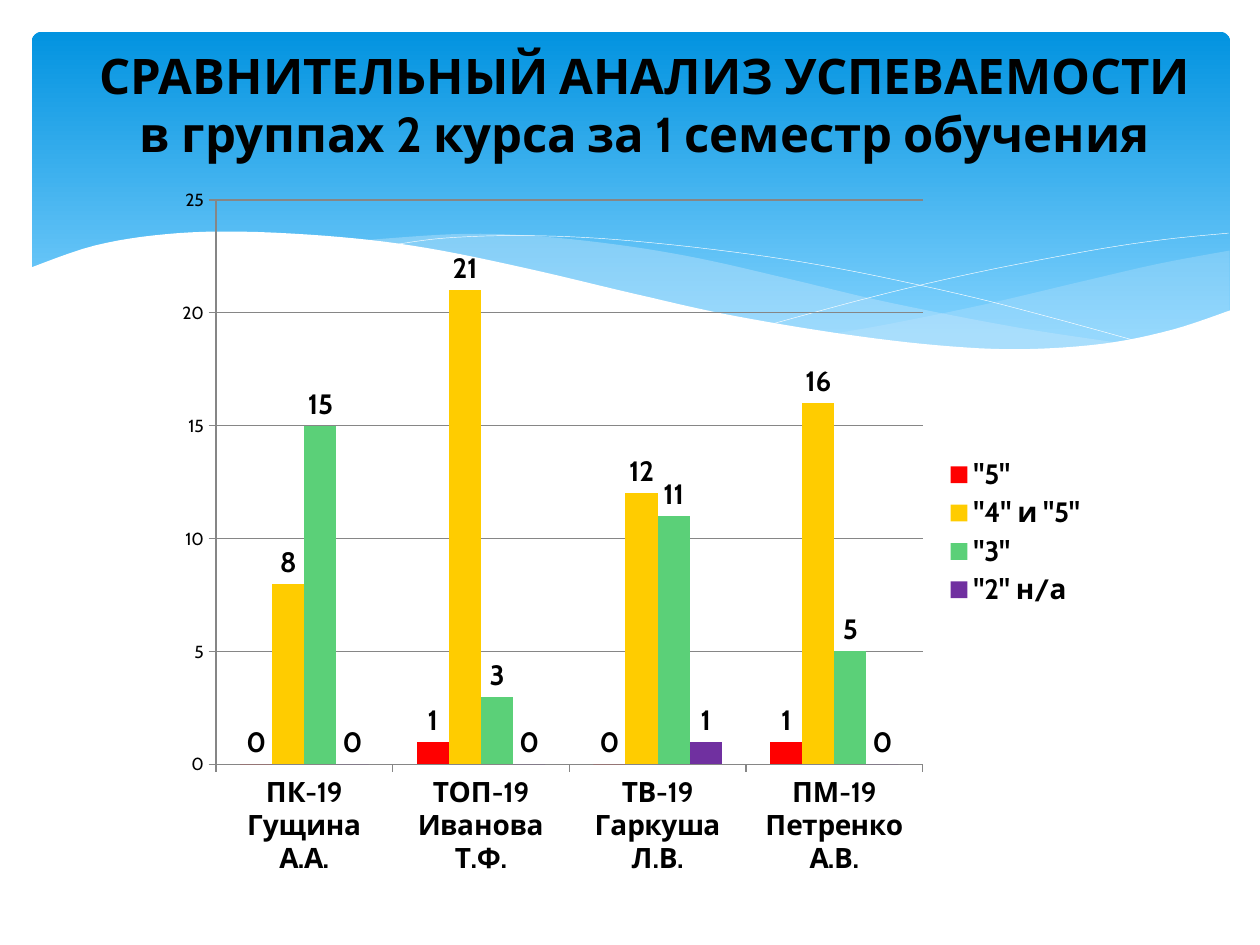
import pptx
import pptx.chart.data
import pptx.dml.color
import pptx.enum.chart
import pptx.enum.shapes
import pptx.enum.text
import pptx.oxml
import pptx.oxml.ns
import pptx.util

Cm = pptx.util.Cm
Pt = pptx.util.Pt
RGBColor = pptx.dml.color.RGBColor

FONT = "Cabin"
BLACK = RGBColor(0x00, 0x00, 0x00)
WHITE = RGBColor(0xFF, 0xFF, 0xFF)
SKY_TOP = RGBColor(0x02, 0x93, 0xE0)
SKY_BOTTOM = RGBColor(0x83, 0xD3, 0xFE)
PALE_BLUE = RGBColor(0xC6, 0xE7, 0xFC)
AXIS_GRAY = RGBColor(0x86, 0x86, 0x86)
RED = RGBColor(0xFF, 0x00, 0x00)
YELLOW = RGBColor(0xFF, 0xCC, 0x00)
GREEN = RGBColor(0x5B, 0xD0, 0x78)
PURPLE = RGBColor(0x70, 0x30, 0xA0)

TITLE_FORMAT = {"name": FONT, "size": Pt(28), "bold": True}
CHART_FORMAT = {"name": FONT, "size": Pt(10), "bold": False}
LABEL_FORMAT = {"name": FONT, "size": Pt(16), "bold": True}

GROUPS = ["ПК-19 Гущина А.А.", "ТОП-19 Иванова Т.Ф.",
          "ТВ-19 Гаркуша Л.В.", "ПМ-19 Петренко А.В."]
GRADES = [
    ('"5"', (0, 1, 0, 1), RED),
    ('"4" и "5"', (8, 21, 12, 16), YELLOW),
    ('"3"', (15, 3, 11, 5), GREEN),
    ('"2" н/а', (0, 0, 1, 0), PURPLE),
]

# Wave points in centimetres
RIGHT_BAND = [
    [(24.79, 5.05), (23.39, 5.31), (21.87, 5.66), (19.79, 6.15), (17.93, 6.53), (16.79, 6.73)],
    [(16.79, 6.73), (18.24, 6.91), (19.53, 7.04), (20.93, 7.04), (22.38, 6.93),
     (23.57, 6.68), (24.79, 6.27)],
]
MIDDLE_BAND = [
    [(22.68, 6.93), (20.5, 6.6), (17.93, 6.1), (15.98, 5.64), (14.1, 5.21),
     (12.42, 4.93), (10.67, 4.75), (9.17, 4.72), (7.26, 4.85)],
    [(7.26, 4.85), (9.19, 5.16), (11.4, 5.64), (13.46, 6.1), (15.7, 6.55),
     (17.65, 6.86), (19.33, 7.04), (21.03, 7.06), (22.68, 6.93)],
]
FALLING_LINE = [[(7.85, 4.95), (8.97, 4.8), (10.57, 4.75), (12.42, 4.83), (14.78, 5.08),
                 (16.89, 5.41), (19.3, 5.92), (21.11, 6.38), (23.04, 6.91)]]
RISING_LINE = [[(15.57, 6.53), (17.65, 5.97), (19.71, 5.49), (22, 5.05),
                (23.47, 4.83), (24.77, 4.7)]]
FRONT_WAVE = [
    [(24.82, 6.25), (23.62, 6.65), (22.23, 6.93), (20.55, 7.04), (18.9, 6.96),
     (16.97, 6.73), (14.71, 6.35), (12.78, 5.92), (10.62, 5.41), (8.61, 5),
     (6.88, 4.78), (4.9, 4.67), (3.35, 4.72), (1.91, 4.95), (0.58, 5.41)],
    [(0.58, 8.36), (24.82, 8.36)],
]


def apply_format(target, values):
    for name, value in values.items():
        setattr(target, name, value)


def format_font(font, values):
    apply_format(font, values)
    font.color.rgb = BLACK


def smooth_curve(points, steps=6):
    """Return points of a Catmull-Rom curve through the given points."""
    padded = [points[0], *points, points[-1]]
    curve = [points[0]]
    for before, start, end, after in zip(padded, padded[1:], padded[2:], padded[3:]):
        for step in range(1, steps + 1):
            t = step / steps
            curve.append(tuple(
                (2 * b + (c - a) * t + (2 * a - 5 * b + 4 * c - d) * t ** 2
                 + (3 * b - a - 3 * c + d) * t ** 3) / 2
                for a, b, c, d in zip(before, start, end, after)))
    return curve


def add_wave(slide, curves, closed=True):
    points = [(Cm(x), Cm(y)) for curve in curves for x, y in smooth_curve(curve)]
    builder = slide.shapes.build_freeform(*points[0])
    builder.add_line_segments(points[1:], close=closed)
    shape = builder.convert_to_shape()
    shape.shadow.inherit = False
    return shape


def add_filled_wave(slide, curves, color, opacity=100):
    shape = add_wave(slide, curves)
    shape.fill.solid()
    shape.fill.fore_color.rgb = color
    shape.line.fill.background()
    if opacity < 100:
        color_element = next(shape.element.iter(pptx.oxml.ns.qn("a:srgbClr")))
        alpha = pptx.oxml.parse_xml(
            f'<a:alpha {pptx.oxml.ns.nsdecls("a")} val="{opacity * 1000}"/>')
        color_element.append(alpha)


def add_wave_line(slide, curves):
    shape = add_wave(slide, curves, closed=False)
    shape.fill.background()
    shape.line.color.rgb = WHITE
    shape.line.width = Pt(0.25)


def add_sky(slide):
    shape = slide.shapes.add_shape(
        pptx.enum.shapes.MSO_SHAPE.ROUNDED_RECTANGLE,
        Cm(0.64), Cm(0.64), Cm(24.16), Cm(6.86))
    shape.adjustments[0] = 0.03
    shape.shadow.inherit = False
    shape.line.fill.background()
    shape.fill.gradient()
    shape.fill.gradient_angle = 270
    stops = [(0, SKY_TOP), (0.9, SKY_BOTTOM)]
    for stop, (position, color) in zip(shape.fill.gradient_stops, stops):
        stop.position = position
        stop.color.rgb = color


def add_title(slide, lines):
    title = slide.shapes.title
    apply_format(title, {"left": Cm(1.3), "top": Cm(0.91),
                         "width": Cm(23.4), "height": Cm(3.48)})
    apply_format(title.text_frame, {
        "text": "\v".join(lines), "word_wrap": True, "margin_top": 0,
        "vertical_anchor": pptx.enum.text.MSO_ANCHOR.TOP,
        "auto_size": pptx.enum.text.MSO_AUTO_SIZE.NONE})
    paragraph = title.text_frame.paragraphs[0]
    paragraph.alignment = pptx.enum.text.PP_ALIGN.CENTER
    for run in paragraph.runs:
        format_font(run.font, TITLE_FORMAT)
    # Bring the title in front of the waves
    title.element.getparent().append(title.element)


def format_axes(chart):
    value_axis, category_axis = chart.value_axis, chart.category_axis
    apply_format(value_axis, {"minimum_scale": 0, "maximum_scale": 25, "major_unit": 5,
                              "has_major_gridlines": True})
    value_axis.major_gridlines.format.line.color.rgb = AXIS_GRAY
    for axis, font_format in ((value_axis, CHART_FORMAT), (category_axis, LABEL_FORMAT)):
        axis.major_tick_mark = pptx.enum.chart.XL_TICK_MARK.OUTSIDE
        axis.format.line.color.rgb = AXIS_GRAY
        format_font(axis.tick_labels.font, font_format)


def add_grades_chart(slide):
    data = pptx.chart.data.CategoryChartData()
    data.categories = GROUPS
    for name, values, _ in GRADES:
        data.add_series(name, values)
    chart = slide.shapes.add_chart(
        pptx.enum.chart.XL_CHART_TYPE.COLUMN_CLUSTERED,
        Cm(3.3), Cm(3.53), Cm(18.87), Cm(14.4), data).chart
    apply_format(chart, {"has_title": False, "has_legend": True})
    format_font(chart.font, CHART_FORMAT)
    format_axes(chart)
    apply_format(chart.legend, {"include_in_layout": False,
                                "position": pptx.enum.chart.XL_LEGEND_POSITION.RIGHT})
    format_font(chart.legend.font, LABEL_FORMAT)
    plot = chart.plots[0]
    apply_format(plot, {"gap_width": 150, "overlap": 0, "vary_by_categories": False})
    for series, (_, _, color) in zip(plot.series, GRADES):
        series.format.fill.solid()
        series.format.fill.fore_color.rgb = color
        apply_format(series.data_labels, {
            "show_value": True,
            "position": pptx.enum.chart.XL_LABEL_POSITION.OUTSIDE_END})
        format_font(series.data_labels.font, LABEL_FORMAT)


def main():
    presentation = pptx.Presentation()
    apply_format(presentation, {"slide_width": Cm(25.4), "slide_height": Cm(19.05)})
    slide = presentation.slides.add_slide(presentation.slide_layouts[5])
    add_sky(slide)
    add_filled_wave(slide, RIGHT_BAND, PALE_BLUE, opacity=29)
    add_filled_wave(slide, MIDDLE_BAND, PALE_BLUE, opacity=40)
    add_wave_line(slide, FALLING_LINE)
    add_wave_line(slide, RISING_LINE)
    add_filled_wave(slide, FRONT_WAVE, WHITE)
    add_title(slide, ["СРАВНИТЕЛЬНЫЙ АНАЛИЗ УСПЕВАЕМОСТИ",
                      "в группах 2 курса за 1 семестр обучения"])
    add_grades_chart(slide)
    presentation.save("out.pptx")


if __name__ == "__main__":
    main()
